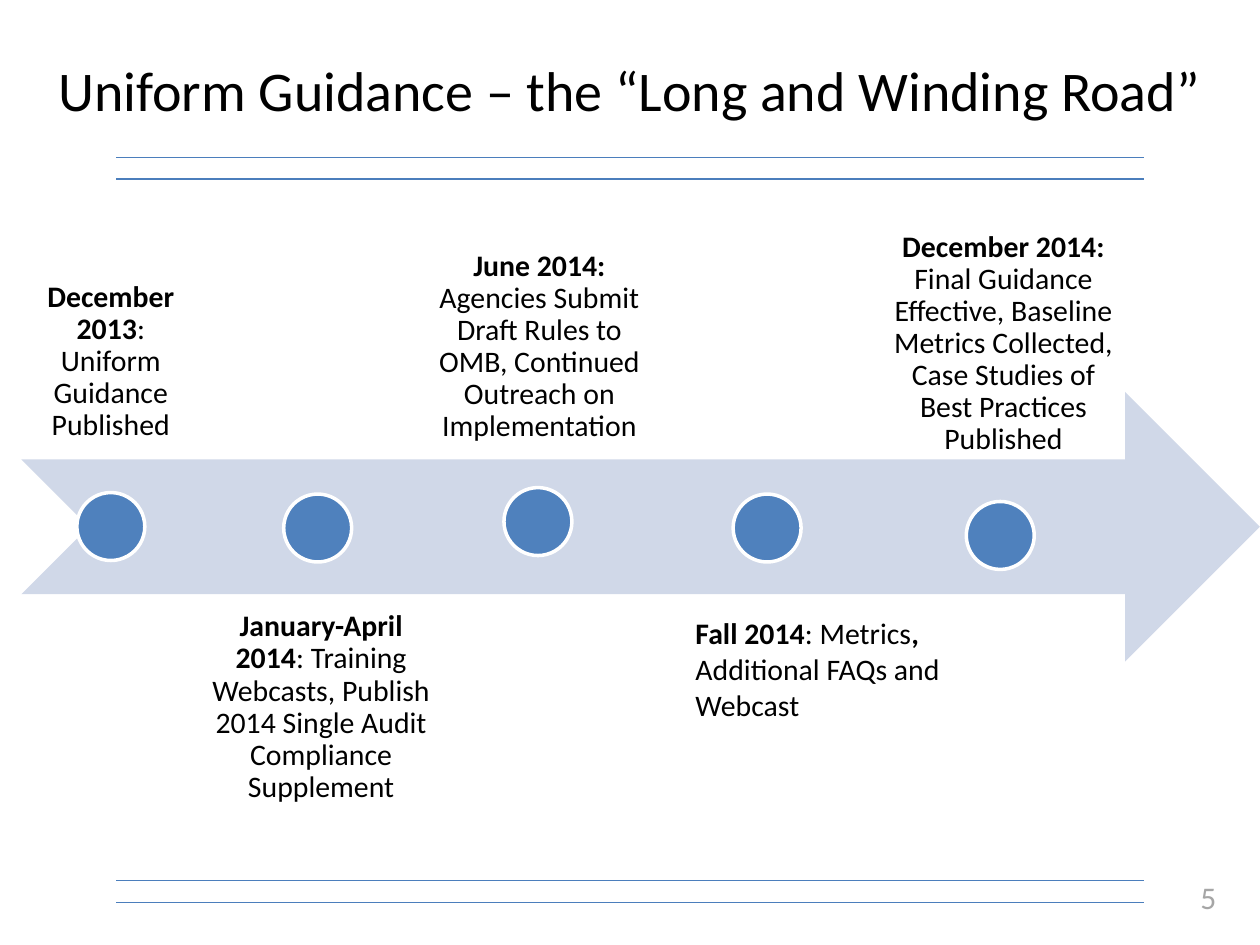
from lxml import etree
from pptx import Presentation
from pptx.dml.color import RGBColor
from pptx.enum.shapes import MSO_CONNECTOR, MSO_SHAPE
from pptx.enum.text import MSO_ANCHOR, PP_ALIGN
from pptx.oxml.ns import qn
from pptx.util import Cm, Pt

TOP, MIDDLE, BOTTOM = MSO_ANCHOR.TOP, MSO_ANCHOR.MIDDLE, MSO_ANCHOR.BOTTOM
LEFT, CENTER, RIGHT = PP_ALIGN.LEFT, PP_ALIGN.CENTER, PP_ALIGN.RIGHT
STRAIGHT = MSO_CONNECTOR.STRAIGHT
ARROW, OVAL = MSO_SHAPE.NOTCHED_RIGHT_ARROW, MSO_SHAPE.OVAL

FONT = "Calibri"
COLORS = {
    "text": "000000",
    "number": "A6A6A6",
    "rule": "4B7EBC",
    "arrow": "D0D8E8",
    "dot": "4F81BD",
    "white": "FFFFFF",
}

RULE_LEFT, RULE_RIGHT = 2.34, 23.06
RULE_TOPS = (3.18, 3.61, 17.75, 18.19)
DOT_SIZE = 1.37
DOTS = ((1.55, 9.93), (5.72, 9.96), (10.16, 9.83), (14.78, 9.96), (19.48, 10.11))

# Box (left, top, width, height), anchor, (text, bold) runs
MILESTONES = (
    ((0.43, 3.81, 3.61, 5.44), BOTTOM,
     (("December 2013", True), (": Uniform Guidance Published", False))),
    ((3.81, 11.99, 5.33, 5.44), TOP,
     (("January-April 2014", True),
      (": Training Webcasts, Publish 2014 Single Audit Compliance Supplement", False))),
    ((8.46, 4.24, 4.83, 5.03), BOTTOM,
     (("June 2014: ", True),
      ("Agencies Submit Draft Rules to OMB, Continued Outreach on Implementation", False))),
    ((17.5, 4.65, 5.46, 4.88), BOTTOM,
     (("December 2014: ", True),
      ("Final Guidance Effective, Baseline Metrics Collected, "
       "Case Studies of Best Practices Published", False))),
)
FALL = (("Fall 2014", True), (": Metrics", False), (", ", True),
        ("Additional FAQs and Webcast", False))


def rgb(name):
    return RGBColor.from_string(COLORS[name])


def add_text(slide, box, runs, size=17, color="text", align=LEFT, anchor=TOP,
             inset=None, spacing=None):
    """Add a text box with one paragraph of (text, bold) runs."""
    tf = slide.shapes.add_textbox(*map(Cm, box)).text_frame
    tf.word_wrap = True
    tf.vertical_anchor = anchor
    if inset is not None:
        tf.margin_left = tf.margin_right = Cm(inset)
        tf.margin_top = tf.margin_bottom = Cm(inset)
    p = tf.paragraphs[0]
    p.alignment = align
    if spacing is not None:
        p.line_spacing = spacing
    for text, bold in runs:
        r = p.add_run()
        r.text = text
        r.font.name = FONT
        r.font.size = Pt(size)
        r.font.bold = bold
        r.font.color.rgb = rgb(color)


def add_rule(slide, top):
    line = slide.shapes.add_connector(
        STRAIGHT, Cm(RULE_LEFT), Cm(top), Cm(RULE_RIGHT), Cm(top))
    line.line.color.rgb = rgb("rule")
    line.line.width = Pt(0.75)
    etree.SubElement(line.element.spPr, qn("a:effectLst"))


def add_shape(slide, kind, box, fill, outline=None):
    sp = slide.shapes.add_shape(kind, *map(Cm, box))
    sp.shadow.inherit = False
    sp.fill.solid()
    sp.fill.fore_color.rgb = rgb(fill)
    if outline:
        sp.line.color.rgb = rgb(outline)
        sp.line.width = Pt(2)
    else:
        sp.line.fill.background()


def main():
    prs = Presentation()
    prs.slide_width, prs.slide_height = Cm(25.4), Cm(19.05)
    slide = prs.slides.add_slide(prs.slide_layouts[6])

    for top in RULE_TOPS:
        add_rule(slide, top)
    add_text(slide, (18.85, 17.58, 5.92, 1.02), (("5", False),), size=18,
             color="number", align=RIGHT)

    add_shape(slide, ARROW, (0.43, 7.9, 24.97, 5.44), "arrow")
    for left, top in DOTS:
        add_shape(slide, OVAL, (left, top, DOT_SIZE, DOT_SIZE), "dot", "white")
    for box, anchor, runs in MILESTONES:
        add_text(slide, box, runs, align=CENTER, anchor=anchor, inset=0.33, spacing=0.9)
    add_text(slide, (13.77, 12.27, 5.92, 2.44), FALL)

    add_text(slide, (0, 0.2, 25.4, 3.18),
             (("Uniform Guidance – the “Long and Winding Road”", False),),
             size=32, align=CENTER, anchor=MIDDLE)
    prs.save("out.pptx")


if __name__ == "__main__":
    main()
